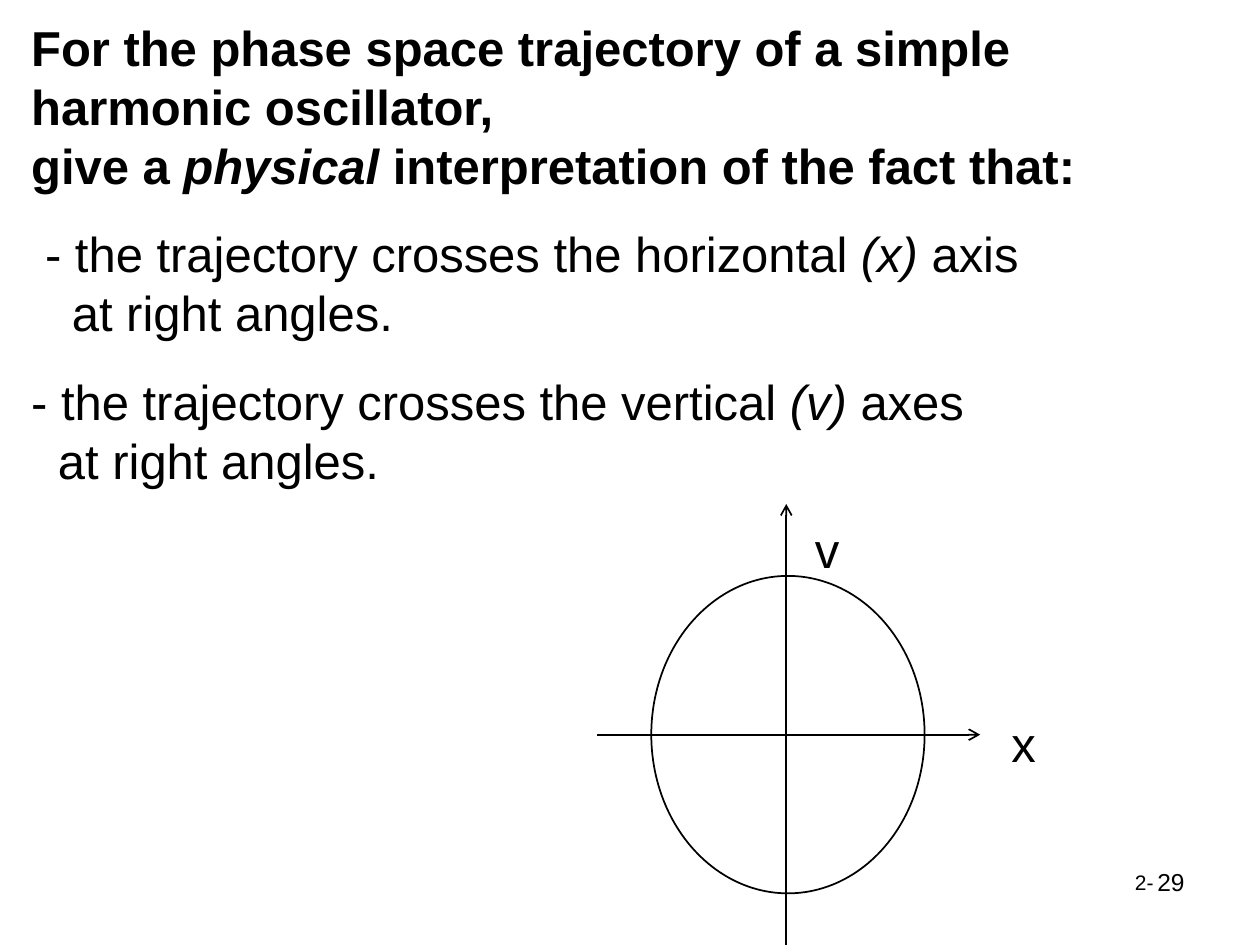
from lxml import etree
from pptx import Presentation
from pptx import util as u
from pptx.dml.color import RGBColor
from pptx.enum import shapes, text
from pptx.oxml.ns import qn

COLORS = {"ink": "000000"}
INK = RGBColor.from_string(COLORS["ink"])

deck = Presentation()
deck.slide_width, deck.slide_height = u.Cm(25.4), u.Cm(19.05)
slide = deck.slides.add_slide(deck.slide_layouts[6])


def write(left, top, width, height, paragraphs, size=28, align=text.PP_ALIGN.LEFT, wrap=True):
    box = slide.shapes.add_textbox(u.Cm(left), u.Cm(top), u.Cm(width), u.Cm(height))
    frame = box.text_frame
    frame.word_wrap = wrap
    for number, (runs, bold, before, margin, indent) in enumerate(paragraphs):
        para = frame.add_paragraph() if number else frame.paragraphs[0]
        para.alignment = align
        para.space_before = u.Pt(before)
        props = para._p.get_or_add_pPr()
        props.set("marL", str(u.Cm(margin)))
        props.set("indent", str(u.Cm(indent)))
        for words, italic in runs:
            if words == "\n":
                para.add_line_break()
                continue
            run = para.add_run()
            run.text = words
            run.font.name = "Arial"
            run.font.size = u.Pt(size)
            run.font.bold = bold
            run.font.italic = italic
            run.font.color.rgb = INK


def plain(words):
    return [([(words, False)], False, 0, 0, 0)]


question = [
    ([("For the phase space trajectory of a simple harmonic oscillator,", False)], True, 0, 0, 0),
    ([("give a ", False), ("physical", True),
      (" interpretation of the fact that:", False)], True, 0, 0, 0),
]
for direction, symbol, noun, margin in [
    ("horizontal", "(x)", "axis", 0.82),
    ("vertical", "(v)", "axes", 0.54),
]:
    crossing = [(f"- the trajectory crosses the {direction} ", False), (symbol, True),
                (f" {noun}", False), ("\n", False), ("at right angles.", False)]
    question.append((crossing, False, 17, margin, -0.54))

write(22.63, 17.4, 1.22, 0.76, plain("2-"), size=12)
write(18.21, 17.35, 5.92, 1.32, plain("29"), size=14, align=text.PP_ALIGN.RIGHT)
write(0.38, 0.23, 24.74, 11.02, question)

for x1, y1, x2, y2 in [(12.04, 14.81, 19.76, 14.81), (15.85, 19.05, 15.85, 10.16)]:
    axis = slide.shapes.add_connector(
        shapes.MSO_CONNECTOR.STRAIGHT, u.Cm(x1), u.Cm(y1), u.Cm(x2), u.Cm(y2))
    axis.line.color.rgb = INK
    axis.line.width = u.Pt(1)
    etree.SubElement(axis.line._get_or_add_ln(), qn("a:tailEnd"), type="arrow")
    etree.SubElement(axis._element.spPr, qn("a:effectLst"))

trajectory = slide.shapes.add_shape(
    shapes.MSO_SHAPE.OVAL, u.Cm(13.13), u.Cm(11.61), u.Cm(5.51), u.Cm(6.4))
trajectory.shadow.inherit = False
trajectory.fill.background()
trajectory.line.color.rgb = INK
trajectory.line.width = u.Pt(1)

for symbol, left, top in [("x", 20.14, 14.25), ("v", 16.18, 10.34)]:
    write(left, top, 1.04, 1.45, plain(symbol), wrap=False)

deck.save("out.pptx")
